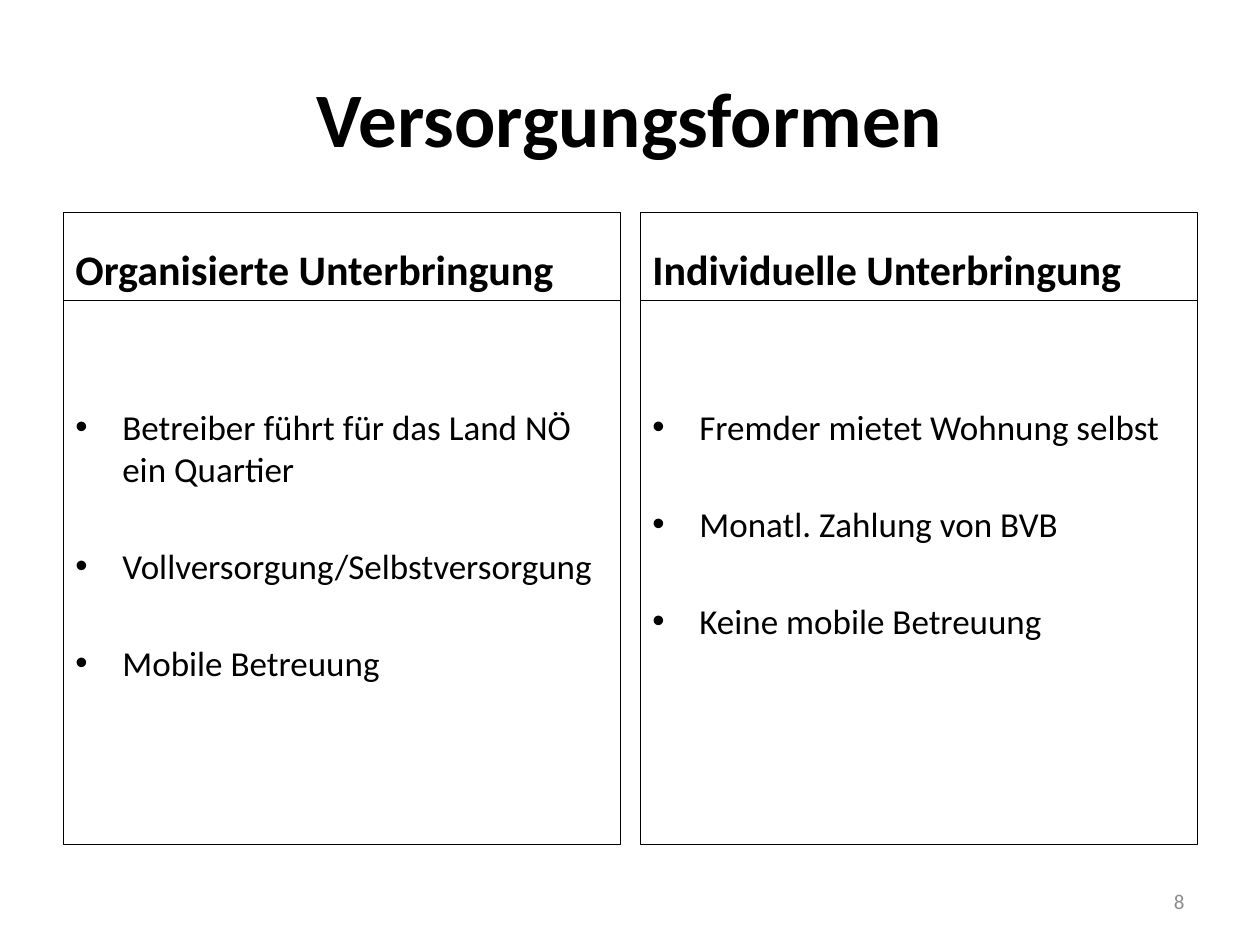
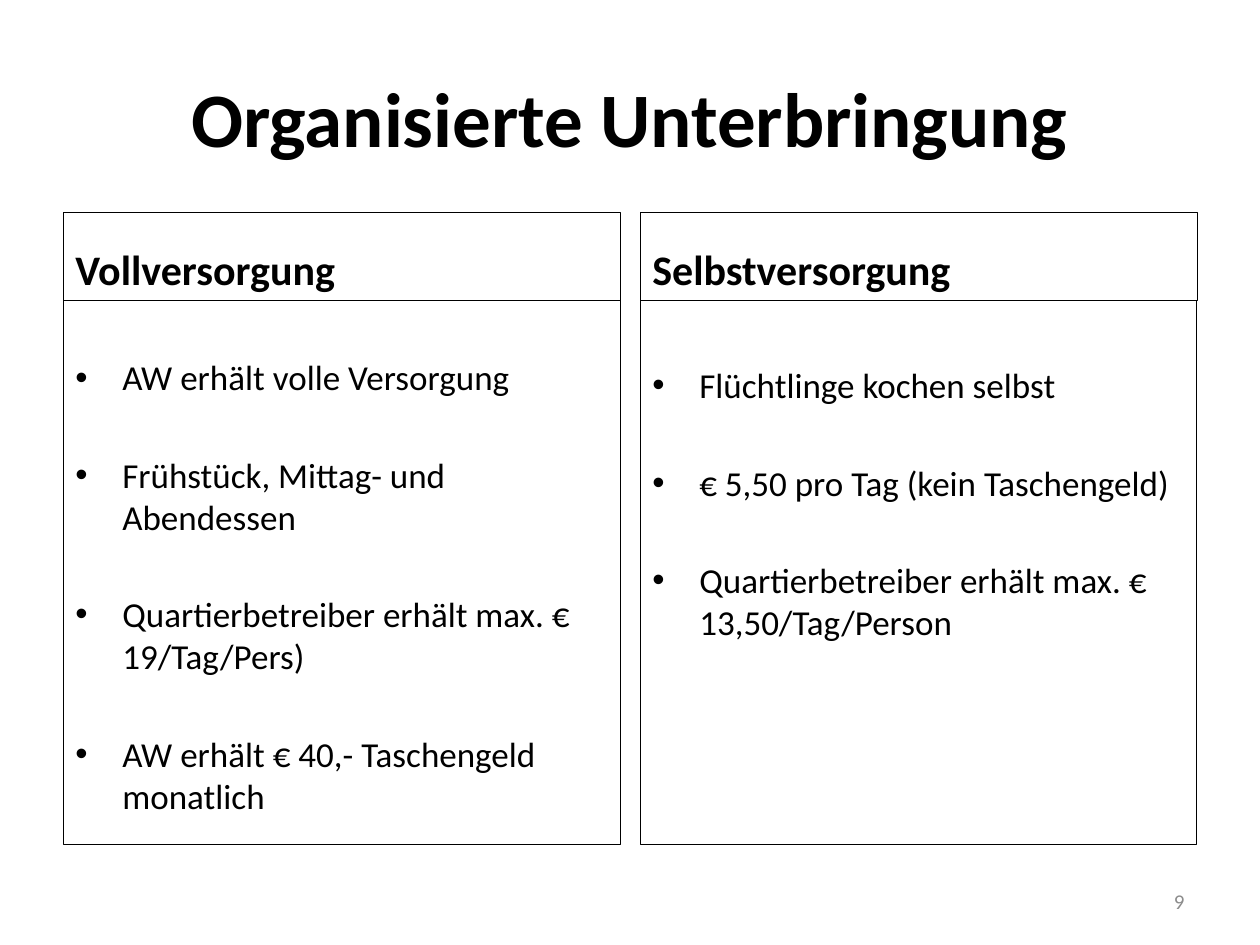
from lxml.etree import SubElement
from pptx import Presentation
from pptx.dml.color import RGBColor
from pptx.enum.shapes import MSO_SHAPE as Shape
from pptx.enum.text import MSO_ANCHOR as Anchor, PP_ALIGN as Align
from pptx.oxml.ns import qn
from pptx.util import Pt

# Content: per column the heading, the space above its list, the list width and its points
SLIDES = [
    {"title": "Versorgungsformen", "number": "8", "columns": [
        ("Organisierte Unterbringung", 105, 557,
         ["Betreiber führt für das Land NÖ ein Quartier",
          "Vollversorgung/Selbstversorgung",
          "Mobile Betreuung"]),
        ("Individuelle Unterbringung", 105, 557,
         ["Fremder mietet Wohnung selbst",
          "Monatl. Zahlung von BVB",
          "Keine mobile Betreuung"]),
    ]},
    {"title": "Organisierte Unterbringung", "number": "9", "columns": [
        ("Vollversorgung", 56, 557,
         ["AW erhält volle Versorgung",
          "Frühstück, Mittag- und Abendessen",
          "Quartierbetreiber erhält max. € 19/Tag/Pers)",
          "AW erhält € 40,- Taschengeld monatlich"]),
        ("Selbstversorgung", 64, 556,
         ["Flüchtlinge kochen selbst",
          "€ 5,50 pro Tag (kein Taschengeld)",
          "Quartierbetreiber erhält max. € 13,50/Tag/Person"]),
    ]},
]

# Shared style
COLORS = {"text": "000000", "border": "000000", "number": "8C8C8C"}
FONT = "Calibri"
POINT_GAP = Pt(31.6)

# Layout in px
WIDTH, HEIGHT = 1260, 945
MARGIN = 63
TITLE_BOX = (MARGIN, 38, WIDTH - 2 * MARGIN, 157)
NUMBER_BOX = (903, 876, 294, 50)
COLUMN_STEP, COLUMN_WIDTH = 577, 557
HEADING_TOP, HEADING_HEIGHT = 212, 88
LIST_TOP, LIST_HEIGHT = HEADING_TOP + HEADING_HEIGHT, 544
BULLET_INDENT = 47


def px(length):
    return round(length * 914400 / 126)


def write(box, lines, size, anchor, align=Align.LEFT, bold=False, color="text"):
    frame = box.text_frame
    frame.word_wrap = True
    frame.vertical_anchor = anchor
    frame.text = "\n".join(lines)
    for paragraph in frame.paragraphs:
        paragraph.alignment = align
        font = paragraph.runs[0].font
        font.name, font.size, font.bold = FONT, Pt(size), bold
        font.color.rgb = RGBColor.from_string(COLORS[color])
    return frame


def add_text(slide, area, text, size, **style):
    box = slide.shapes.add_textbox(*map(px, area))
    write(box, [text], size, Anchor.MIDDLE, **style)


def add_panel(slide, *area):
    panel = slide.shapes.add_shape(Shape.RECTANGLE, *map(px, area))
    panel.shadow.inherit = False
    panel.fill.background()
    panel.line.color.rgb = RGBColor.from_string(COLORS["border"])
    panel.line.width = Pt(0.25)
    return panel


def add_bullet(paragraph):
    props = paragraph._p.get_or_add_pPr()
    props.set("marL", str(px(BULLET_INDENT)))
    props.set("indent", str(-px(BULLET_INDENT)))
    SubElement(props, qn("a:buFont"), typeface="Arial")
    SubElement(props, qn("a:buChar"), char="•")


def add_column(slide, left, heading, space_above, list_width, points):
    heading_panel = add_panel(slide, left, HEADING_TOP, COLUMN_WIDTH, HEADING_HEIGHT)
    write(heading_panel, [heading], 24, Anchor.BOTTOM, bold=True)

    list_panel = add_panel(slide, left, LIST_TOP, list_width, LIST_HEIGHT)
    frame = write(list_panel, points, 20, Anchor.TOP)
    frame.margin_top = px(space_above)
    for index, paragraph in enumerate(frame.paragraphs):
        paragraph.space_before = POINT_GAP if index else Pt(0)
        add_bullet(paragraph)


def main():
    deck = Presentation()
    deck.slide_width, deck.slide_height = px(WIDTH), px(HEIGHT)
    for content in SLIDES:
        slide = deck.slides.add_slide(deck.slide_layouts[6])
        add_text(slide, TITLE_BOX, content["title"], 44, align=Align.CENTER, bold=True)
        for index, column in enumerate(content["columns"]):
            add_column(slide, MARGIN + index * COLUMN_STEP, *column)
        add_text(slide, NUMBER_BOX, content["number"], 12, align=Align.RIGHT, color="number")
    deck.save("out.pptx")


if __name__ == "__main__":
    main()
